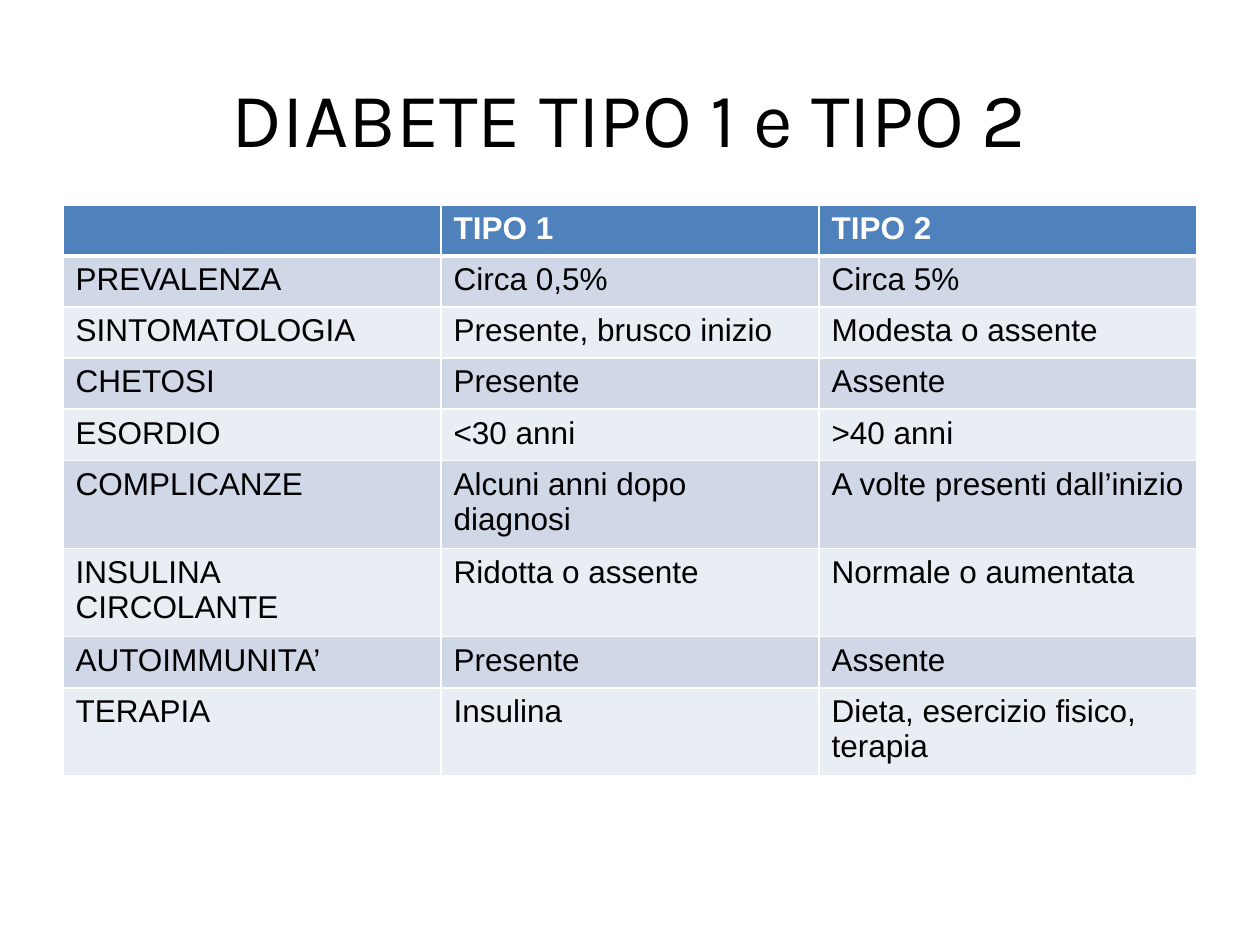
from lxml import etree
from pptx import Presentation
from pptx.dml.color import RGBColor
from pptx.enum.text import MSO_ANCHOR, PP_ALIGN
from pptx.oxml.ns import qn
from pptx.util import Pt

MIDDLE = MSO_ANCHOR.MIDDLE
CENTER = PP_ALIGN.CENTER

BLACK = RGBColor(0x00, 0x00, 0x00)
WHITE = RGBColor(0xFF, 0xFF, 0xFF)
HEADER_BLUE = RGBColor(0x4F, 0x81, 0xBD)
BAND_COLORS = (RGBColor(0xD0, 0xD8, 0xE8), RGBColor(0xE9, 0xED, 0xF4))

LINE_HEIGHT = 29.2
TWO_LINE_HEIGHT = 47.5
TWO_LINE_ROWS = ("COMPLICANZE", "INSULINA CIRCOLANTE", "TERAPIA")

COMPARISON = [
    ("", "TIPO 1", "TIPO 2"),
    ("PREVALENZA", "Circa 0,5%", "Circa 5%"),
    ("SINTOMATOLOGIA", "Presente, brusco inizio", "Modesta o assente"),
    ("CHETOSI", "Presente", "Assente"),
    ("ESORDIO", "<30 anni", ">40 anni"),
    ("COMPLICANZE", "Alcuni anni dopo diagnosi", "A volte presenti dall’inizio"),
    ("INSULINA CIRCOLANTE", "Ridotta o assente", "Normale o aumentata"),
    ("AUTOIMMUNITA’", "Presente", "Assente"),
    ("TERAPIA", "Insulina", "Dieta, esercizio fisico, terapia"),
]


class SlideBuilder:
    title_font, title_size = "Karla", 44
    table_font, table_size = "Arial", 18

    def __init__(self, slide):
        self.slide = slide

    def format_runs(self, paragraph, name, size, color, bold=False):
        for run in paragraph.runs:
            run.font.name = name
            run.font.size = Pt(size)
            run.font.bold = bold
            run.font.color.rgb = color

    def add_title(self, text, left, top, width, height):
        shape = self.slide.shapes.add_textbox(Pt(left), Pt(top), Pt(width), Pt(height))
        text_frame = shape.text_frame
        text_frame.word_wrap = True
        text_frame.vertical_anchor = MIDDLE
        text_frame.text = text
        paragraph = text_frame.paragraphs[0]
        paragraph.alignment = CENTER
        self.format_runs(paragraph, self.title_font, self.title_size, BLACK)

    def add_borders(self, cell, top, bottom):
        """Draw white borders, 1 pt at the sides."""
        properties = cell._tc.get_or_add_tcPr()
        for tag, width in (("a:lnL", 1), ("a:lnR", 1), ("a:lnT", top), ("a:lnB", bottom)):
            line = etree.SubElement(properties, qn(tag), w=str(Pt(width)))
            fill = etree.SubElement(line, qn("a:solidFill"))
            etree.SubElement(fill, qn("a:srgbClr"), val=str(WHITE))

    def add_table(self, rows, left, top, width):
        heights = [TWO_LINE_HEIGHT if row[0] in TWO_LINE_ROWS else LINE_HEIGHT for row in rows]
        frame = self.slide.shapes.add_table(
            len(rows), len(rows[0]), Pt(left), Pt(top), Pt(width), Pt(sum(heights)))
        table = frame.table
        for row_index, (values, height) in enumerate(zip(rows, heights)):
            table.rows[row_index].height = Pt(height)
            is_header = row_index == 0
            fill_color = HEADER_BLUE if is_header else BAND_COLORS[(row_index - 1) % 2]
            for column_index, value in enumerate(values):
                cell = table.cell(row_index, column_index)
                cell.text_frame.text = value
                self.format_runs(cell.text_frame.paragraphs[0], self.table_font,
                                 self.table_size, WHITE if is_header else BLACK, is_header)
                self.add_borders(cell, top=3 if row_index == 1 else 1,
                                 bottom=3 if is_header else 1)
                cell.fill.solid()
                cell.fill.fore_color.rgb = fill_color


def main():
    presentation = Presentation()
    presentation.slide_width = Pt(720)
    presentation.slide_height = Pt(540)
    builder = SlideBuilder(presentation.slides.add_slide(presentation.slide_layouts[6]))
    builder.add_title("DIABETE TIPO 1 e TIPO 2", 36, 21.6, 648, 90)
    builder.add_table(COMPARISON, 36, 117, 648)
    presentation.save("out.pptx")


if __name__ == "__main__":
    main()
